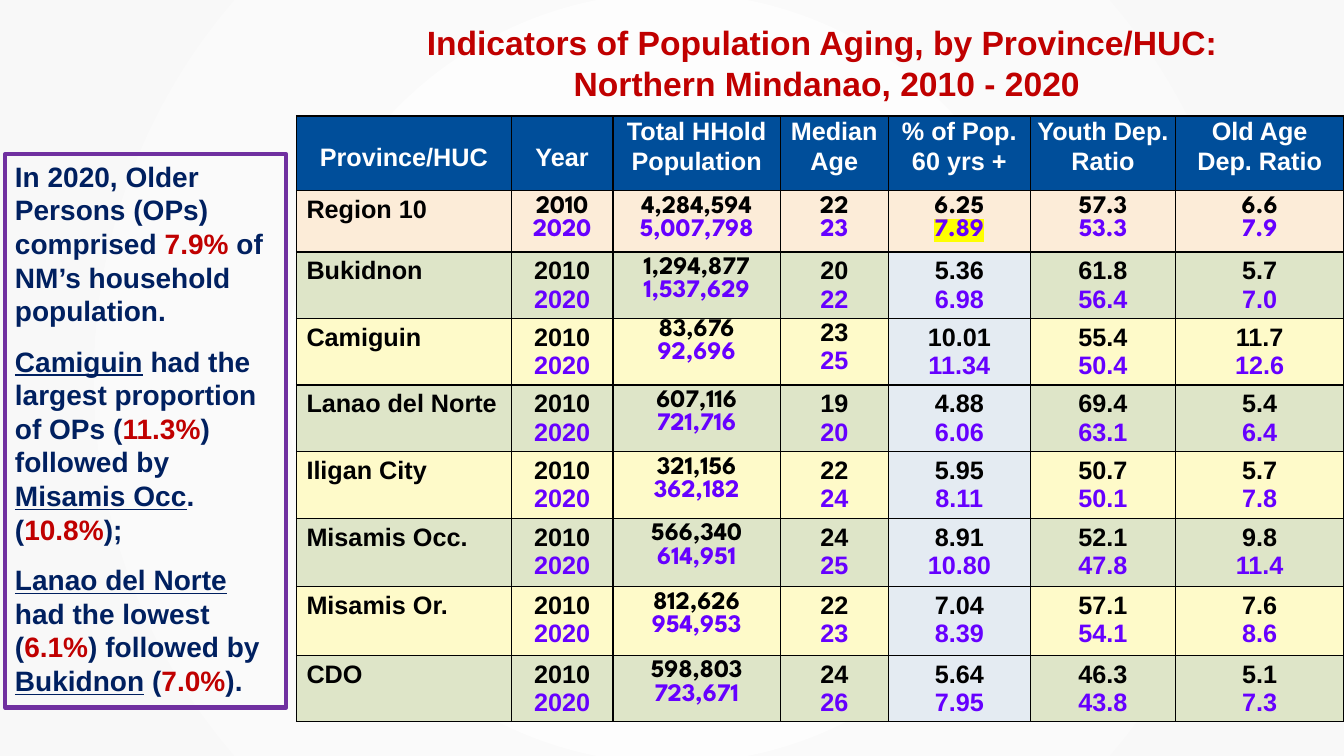
from dataclasses import dataclass
from typing import Any, NamedTuple

from lxml import etree
from pptx import Presentation, util as u
from pptx.dml.color import RGBColor
from pptx.enum import shapes, text
from pptx.oxml import ns

CELL = u.Inches(0.1)  # one column or row of the slide grid
COLORS = {
    "black": "000000", "white": "FFFFFF", "grey": "F8F8F8", "red": "C00000",
    "navy": "002060", "violet": "6600FF", "purple": "7030A0", "yellow": "FFFF00",
    "header": "004E9A", "peach": "FCECD8", "green": "DEE5C8", "cream": "FEFAC9",
    "share": "E4EBF2",
}
CENTER = {"alignment": text.PP_ALIGN.CENTER}
NUMBER_FONT = "League Spartan"


class Box(NamedTuple):
    """Left, top, width and height in grid columns and rows."""
    left: float
    top: float
    width: float
    height: float

    def emu(self) -> list[int]:
        return [round(length * CELL) for length in self]


@dataclass
class Run:
    words: str
    color: str
    size: int = 18
    name: str = "Arial"
    underline: bool = False
    highlight: str = ""


@dataclass
class Province:
    name: str
    before: str
    after: str


TITLE_BOX = Box(41, 1.7, 82, 12.1)
NOTE_BOX = Box(0.5, 15.3, 27.9, 54.9)
TABLE_BOX = Box(29.4, 11.5, 103.9, 57.7)
COLUMN_WIDTHS = [21.3, 10.1, 16.6, 10.7, 14.1, 14.4, 16.7]
ROW_HEIGHTS = [7.4, 6.1, 6.1, 6.1, 6.1, 6.1, 6.8, 6.8, 6.1]
POPULATION, MEDIAN, SHARE = 2, 3, 4  # table columns

TITLE = ["Indicators of Population Aging, by Province/HUC: ",
         "Northern Mindanao, 2010 - 2020"]
HEADINGS = [["Province/HUC"], ["Year"], ["Total HHold Population"], ["Median", "Age"],
            ["% of Pop. 60 yrs +"], ["Youth Dep. Ratio"], ["Old Age Dep. Ratio"]]
PROVINCES = [
    Province("Region 10", "2010 4,284,594 22 6.25 57.3 6.6", "2020 5,007,798 23 7.89 53.3 7.9"),
    Province("Bukidnon", "2010 1,294,877 20 5.36 61.8 5.7", "2020 1,537,629 22 6.98 56.4 7.0"),
    Province("Camiguin", "2010 83,676 23 10.01 55.4 11.7", "2020 92,696 25 11.34 50.4 12.6"),
    Province("Lanao del Norte", "2010 607,116 19 4.88 69.4 5.4", "2020 721,716 20 6.06 63.1 6.4"),
    Province("Iligan City", "2010 321,156 22 5.95 50.7 5.7", "2020 362,182 24 8.11 50.1 7.8"),
    Province("Misamis Occ.", "2010 566,340 24 8.91 52.1 9.8", "2020 614,951 25 10.80 47.8 11.4"),
    Province("Misamis Or.", "2010 812,626 22 7.04 57.1 7.6", "2020 954,953 23 8.39 54.1 8.6"),
    Province("CDO", "2010 598,803 24 5.64 46.3 5.1", "2020 723,671 26 7.95 43.8 7.3"),
]


def plain(words: str) -> Run:
    return Run(words, "navy", 20)


def figure(words: str) -> Run:
    return Run(words, "red", 20)


def place(words: str) -> Run:
    return Run(words, "navy", 20, underline=True)


NOTES = [
    [plain("In 2020, Older Persons (OPs) comprised "), figure("7.9%"),
     plain(" of NM’s household population.")],
    [place("Camiguin"), plain(" had the largest proportion of OPs ("), figure("11.3%"),
     plain(") followed by "), place("Misamis Occ"), plain(". ("), figure("10.8%"), plain(");")],
    [place("Lanao del Norte "), plain("had the lowest ("), figure("6.1%"),
     plain(") followed by "), place("Bukidnon"), plain(" ("), figure("7.0%"), plain(").")],
]


def rgb(color: str) -> RGBColor:
    return RGBColor.from_string(COLORS[color])


def apply(target: Any, formats: dict[str, Any]) -> None:
    for attribute, value in formats.items():
        setattr(target, attribute, value)


def add_solid(parent: Any, tag: str, color: str) -> Any:
    """Append a DrawingML element that holds one colour."""
    element = etree.SubElement(parent, ns.qn(tag))
    etree.SubElement(element, ns.qn("a:srgbClr"), val=COLORS[color])
    return element


def write(frame: Any, paragraphs: list[list[Run]], formats: dict[str, Any],
          gap: int = 0) -> None:
    for index, runs in enumerate(paragraphs):
        paragraph = frame.add_paragraph() if index else frame.paragraphs[0]
        apply(paragraph, formats)
        if index and gap:
            paragraph.space_before = u.Pt(gap)
        for item in runs:
            run = paragraph.add_run()
            run.text = item.words
            apply(run.font, {"size": u.Pt(item.size), "name": item.name, "bold": True,
                             "underline": item.underline})
            run.font.color.rgb = rgb(item.color)
            if item.highlight:
                properties = run.font._element
                mark = add_solid(properties, "a:highlight", item.highlight)
                properties.find(ns.qn("a:solidFill")).addnext(mark)


def fill_cell(cell: Any, color: str, paragraphs: list[list[Run]],
              formats: dict[str, Any], tight: bool = False) -> None:
    """Border, fill and write a cell; a tight one has no top and bottom margin."""
    side, end = (u.Inches(0.07), 0) if tight else (u.Inches(0.1), u.Inches(0.05))
    apply(cell, {"margin_left": side, "margin_right": side,
                 "margin_top": end, "margin_bottom": end})
    for edge in "LRTB":
        border = etree.SubElement(cell._tc.get_or_add_tcPr(), ns.qn(f"a:ln{edge}"),
                                  w=str(u.Pt(1)))
        add_solid(border, "a:solidFill", "black")
    cell.fill.solid()
    cell.fill.fore_color.rgb = rgb(color)
    write(cell.text_frame, paragraphs, formats)


def add_indicators(slide: Any) -> None:
    frame = slide.shapes.add_table(len(ROW_HEIGHTS), len(COLUMN_WIDTHS), *TABLE_BOX.emu())
    table = frame.table
    apply(table, {"first_row": False, "horz_banding": False})
    for column, width in zip(table.columns, COLUMN_WIDTHS):
        column.width = round(width * CELL)
    for row, height in zip(table.rows, ROW_HEIGHTS):
        row.height = round(height * CELL)
    for column, lines in enumerate(HEADINGS):
        spacing = 2.0 if column < POPULATION else 1.07
        fill_cell(table.cell(0, column), "header", [[Run(line, "white")] for line in lines],
                  CENTER | {"line_spacing": spacing}, tight=True)
    for row, province in enumerate(PROVINCES, 1):
        region = row == 1
        band = "peach" if region else ("cream", "green")[row % 2 == 0]
        fill_cell(table.cell(row, 0), band, [[Run(province.name, "black")]], {})
        pairs = zip(province.before.split(), province.after.split())
        for column, (before, after) in enumerate(pairs, 1):
            name = NUMBER_FONT if region or column == POPULATION else "Arial"
            mark = "yellow" if region and column == SHARE else ""
            color = "share" if column == SHARE and not region else band
            tight = province.name == "Camiguin" and column in (POPULATION, MEDIAN)
            fill_cell(table.cell(row, column), color,
                      [[Run(before, "black", name=name)],
                       [Run(after, "violet", name=name, highlight=mark)]], CENTER, tight)


def add_note(slide: Any) -> None:
    note = slide.shapes.add_shape(shapes.MSO_SHAPE.RECTANGLE, *NOTE_BOX.emu())
    note.shadow.inherit = False
    note.fill.background()
    note.line.color.rgb = rgb("purple")
    note.line.width = u.Pt(3)
    apply(note.text_frame, {"word_wrap": True, "vertical_anchor": text.MSO_ANCHOR.TOP,
                            "auto_size": text.MSO_AUTO_SIZE.SHAPE_TO_FIT_TEXT})
    write(note.text_frame, NOTES, {"alignment": text.PP_ALIGN.LEFT}, gap=12)


def add_title(slide: Any) -> None:
    title = slide.shapes.add_textbox(*TITLE_BOX.emu())
    title.text_frame.word_wrap = True
    write(title.text_frame, [[Run(line, "red", 24)] for line in TITLE], CENTER)


def paint_background(slide: Any) -> None:
    """Shade the slide from white at the centre to light grey, in circles."""
    fill = slide.background.fill
    fill.gradient()
    for stop, color in zip(fill.gradient_stops, ("white", "grey")):
        stop.color.rgb = rgb(color)
    linear = next(slide.background._cSld.iter(ns.qn("a:lin")))
    circle = etree.Element(ns.qn("a:path"), path="circle")
    etree.SubElement(circle, ns.qn("a:fillToRect"), dict.fromkeys("ltrb", "50000"))
    linear.getparent().replace(linear, circle)


def main() -> None:
    presentation = Presentation()
    apply(presentation, {"slide_width": u.Inches(13.33), "slide_height": u.Inches(7.5)})
    slide = presentation.slides.add_slide(presentation.slide_layouts[6])
    paint_background(slide)
    add_indicators(slide)
    add_note(slide)
    add_title(slide)
    presentation.save("out.pptx")


if __name__ == "__main__":
    main()
